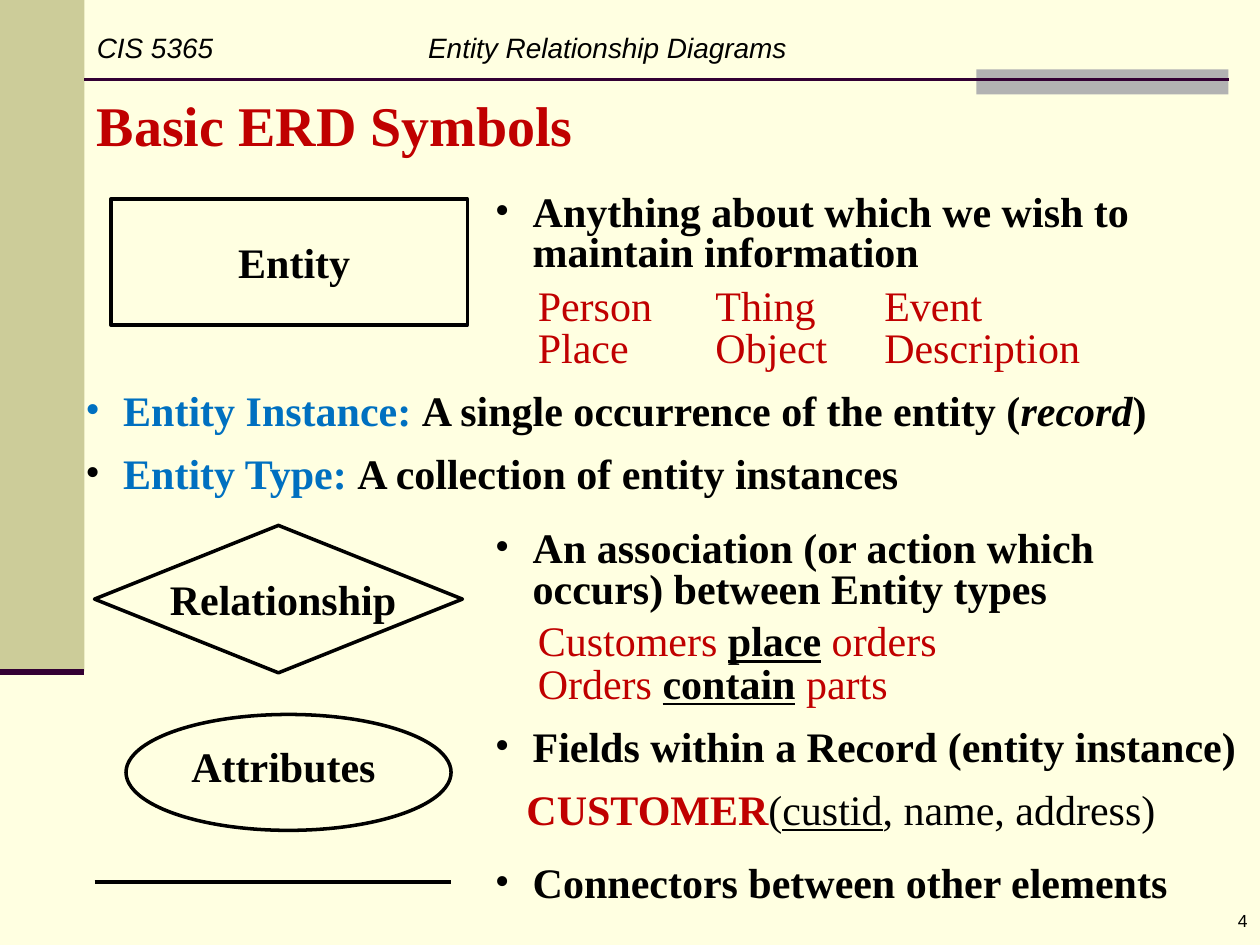
from lxml import etree
from pptx import Presentation
from pptx import util as u
from pptx.dml.color import RGBColor
from pptx.enum import shapes, text
from pptx.oxml import ns

BLACK, RED, BLUE = "000000", "C00000", "0070C0"
CREAM, KHAKI, GRAY, PLUM = "FFFFE1", "CCCC99", "B2B2B2", "330033"
SERIF, SANS = "Times New Roman", "Arial"
SHAPE = shapes.MSO_SHAPE
LEFT, CENTER, RIGHT = text.PP_ALIGN.LEFT, text.PP_ALIGN.CENTER, text.PP_ALIGN.RIGHT
HANGING = 0.3


def rgb(color):
    return RGBColor.from_string(color)


def add_xml(parent, tag, **attributes):
    return etree.SubElement(parent, ns.qn(tag), attributes)


def add_outline(page, kind, left, top, width, height, fill=None, line=None):
    shape = page.shapes.add_shape(
        kind, u.Inches(left), u.Inches(top), u.Inches(width), u.Inches(height))
    shape.shadow.inherit = False
    if fill:
        shape.fill.solid()
        shape.fill.fore_color.rgb = rgb(fill)
    else:
        shape.fill.background()
    if line:
        shape.line.color.rgb = rgb(line)
        shape.line.width = u.Pt(2)
    else:
        shape.line.fill.background()


def add_rule(page, left, right, top, color, weight):
    rule = page.shapes.add_connector(
        shapes.MSO_CONNECTOR.STRAIGHT,
        u.Inches(left), u.Inches(top), u.Inches(right), u.Inches(top))
    rule.line.color.rgb = rgb(color)
    rule.line.width = u.Pt(weight)
    add_xml(rule._element.spPr, "a:effectLst")


def add_text(page, left, top, width, spans, height=0.5, size=24, font=SERIF,
             align=LEFT, anchor=text.MSO_ANCHOR.TOP):
    """Write one paragraph of (words, colour, style) spans; style letters are b, i, u."""
    box = page.shapes.add_textbox(
        u.Inches(left), u.Inches(top), u.Inches(width), u.Inches(height))
    frame = box.text_frame
    frame.word_wrap = True
    frame.vertical_anchor = anchor
    para = frame.paragraphs[0]
    para.alignment = align
    for words, color, style in spans:
        span = para.add_run()
        span.text = words
        span.font.name = font
        span.font.size = u.Pt(size)
        span.font.color.rgb = rgb(color)
        span.font.bold = "b" in style
        span.font.italic = "i" in style
        span.font.underline = "u" in style
    return para


def add_bullet(page, left, top, width, spans, height=0.5, color=BLACK, spacing=None):
    para = add_text(page, left, top, width, spans, height)
    if spacing:
        para.line_spacing = spacing
    props = para._p.get_or_add_pPr()
    indent = u.Inches(HANGING)
    props.set("marL", str(indent))
    props.set("indent", str(-indent))
    add_xml(add_xml(props, "a:buClr"), "a:srgbClr", val=color)
    add_xml(props, "a:buFont", typeface=SERIF)
    add_xml(props, "a:buChar", char="•")


def add_frame(page):
    add_outline(page, SHAPE.RECTANGLE, 0, 0, 0.67, 5.33, fill=KHAKI)
    add_outline(page, SHAPE.RECTANGLE, 7.75, 0.55, 2, 0.2, fill=GRAY)
    add_rule(page, 0.67, 9.75, 0.63, PLUM, 1.5)
    add_rule(page, 0, 0.67, 5.33, PLUM, 3.5)
    header = add_text(
        page, 0.67, -0.25, 9.17, [("CIS 5365\tEntity Relationship Diagrams", BLACK, "i")],
        height=1.25, size=16, font=SANS, anchor=text.MSO_ANCHOR.MIDDLE)
    tabs = add_xml(header._p.get_or_add_pPr(), "a:tabLst")
    add_xml(tabs, "a:tab", pos=str(u.Inches(2.63)), algn="l")
    add_text(page, 0.67, 0.67, 9.33, [("Basic ERD Symbols", RED, "b")],
             height=0.63, size=32)
    add_text(page, 7.92, 7.17, 2.08, [("4", BLACK, "")], size=10, font=SANS, align=RIGHT)


def add_symbols(page):
    add_outline(page, SHAPE.RECTANGLE, 0.88, 1.58, 2.83, 1, fill=CREAM, line=BLACK)
    add_outline(page, SHAPE.DIAMOND, 0.75, 4.17, 2.92, 1.17, line=BLACK)
    add_outline(page, SHAPE.OVAL, 1, 5.67, 2.58, 0.92, line=BLACK)
    add_rule(page, 0.75, 3.58, 7, BLACK, 2)
    for name, left, top, width, align in (
            ("Entity", 1.21, 1.83, 2.25, CENTER),
            ("Relationship", 1.25, 4.5, 2.08, LEFT),
            ("Attributes", 1.42, 5.83, 1.92, LEFT)):
        add_text(page, left, top, width, [(name, BLACK, "b")], align=align)


def add_definitions(page):
    for words, top, width in (
            ("Anything about which we wish to maintain information", 1.5, 5.33),
            ("An association (or action which occurs) between Entity types", 4.17, 5.67)):
        add_bullet(page, 3.83, top, width, [(words, BLACK, "b")], height=0.75, spacing=0.8)
    for words, top, width in (
            ("Fields within a Record (entity instance)", 5.67, 6.17),
            ("Connectors between other elements", 6.75, 5.67)):
        add_bullet(page, 3.83, top, width, [(words, BLACK, "b")])
    add_bullet(page, 0.58, 3, 9.17, [
        ("Entity Instance: ", BLUE, "b"),
        ("A single occurrence of the entity (", BLACK, "b"),
        ("record", BLACK, "bi"),
        (")", BLACK, "b")], color=BLUE)
    add_bullet(page, 0.58, 3.5, 9.17, [
        ("Entity Type: ", BLUE, "b"),
        ("A collection of entity instances", BLACK, "b")])


def add_examples(page):
    columns = ((4.17, ("Person", "Place")),
               (5.58, ("Thing", "Object")),
               (6.92, ("Event", "Description")))
    for left, names in columns:
        for top, name in zip((2.17, 2.5), names):
            add_text(page, left, top, 2.17, [(name, RED, "")])
    for top, subject, verb, target in (
            (4.83, "Customers ", "place", " orders"),
            (5.17, "Orders ", "contain", " parts")):
        add_text(page, 4.17, top, 5.17,
                 [(subject, RED, ""), (verb, BLACK, "bu"), (target, RED, "")])
    add_text(page, 4.08, 6.17, 5.5, [
        ("CUSTOMER", RED, "b"), ("(", BLACK, ""),
        ("custid", BLACK, "u"), (", name, address)", BLACK, "")])


def main():
    deck = Presentation()
    deck.slide_width, deck.slide_height = u.Inches(10), u.Inches(7.5)
    page = deck.slides.add_slide(deck.slide_layouts[6])
    page.background.fill.solid()
    page.background.fill.fore_color.rgb = rgb(CREAM)
    add_frame(page)
    add_symbols(page)
    add_definitions(page)
    add_examples(page)
    deck.save("out.pptx")


if __name__ == "__main__":
    main()
